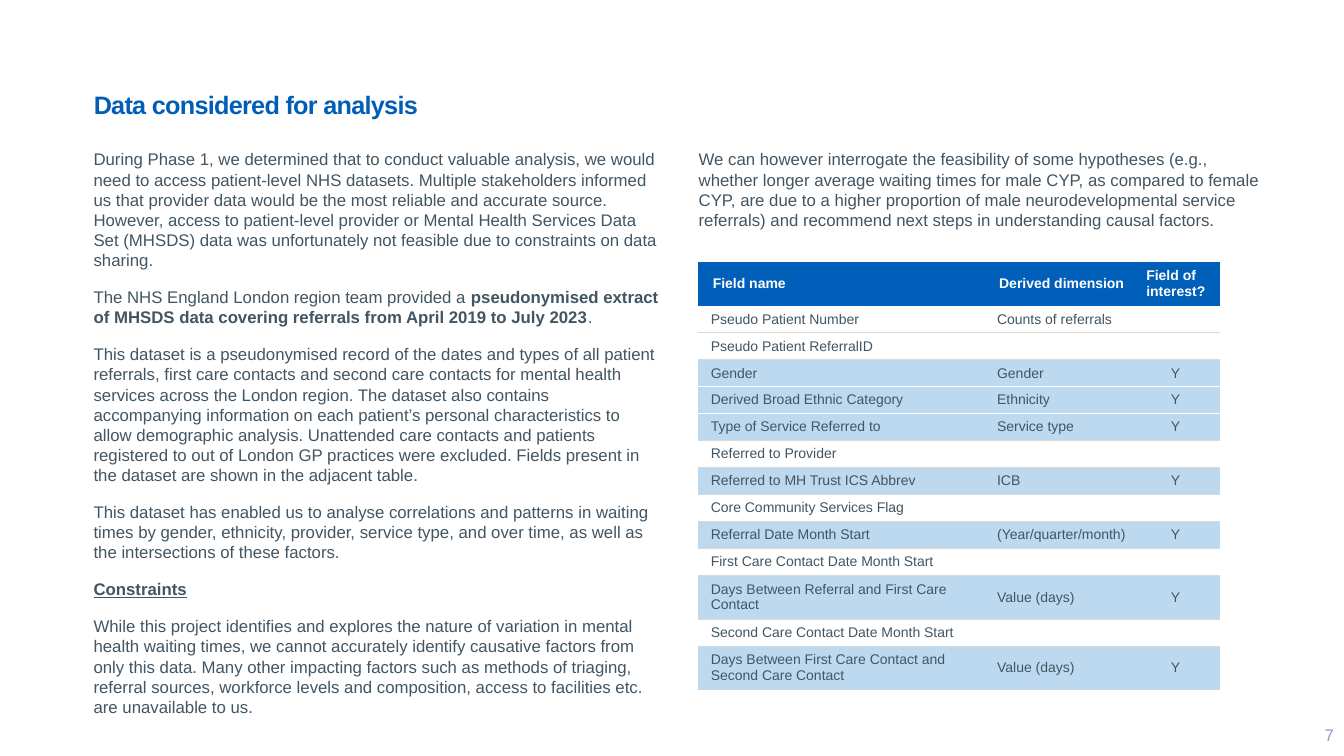
import dataclasses

import pptx
import pptx.dml.color
import pptx.enum.text
import pptx.oxml.ns
import pptx.util
from lxml import etree
from pptx.util import Inches

ALIGN = pptx.enum.text.PP_ALIGN
ANCHOR = pptx.enum.text.MSO_ANCHOR


@dataclasses.dataclass(frozen=True)
class Theme:
    font: str = "Arial"
    blue: str = "005EB8"
    header: str = "005FB8"
    body: str = "425563"
    number: str = "8C9DCD"
    shaded: str = "BDD9F0"
    white: str = "FFFFFF"
    rule: str = "D9D9D9"
    title_size: float = 18
    body_size: float = 12
    table_size: float = 10


THEME = Theme()

# Each paragraph is a list of (text, style) runs
FINDINGS = [
    [("During Phase 1, we determined that to conduct valuable analysis, we would need to access "
      "patient-level NHS datasets. Multiple stakeholders informed us that provider data would be the "
      "most reliable and accurate source. However, access to patient-level provider or Mental Health "
      "Services Data Set (MHSDS) data was unfortunately not feasible due to constraints on data "
      "sharing.", "")],
    [("The NHS England London region team provided a ", ""),
     ("pseudonymised extract of MHSDS data covering referrals from April 2019 to July 2023", "b"),
     (".", "")],
    [("This dataset is a pseudonymised record of the dates and types of all patient referrals, first "
      "care contacts and second care contacts for mental health services across the London region. The "
      "dataset also contains accompanying information on each patient’s personal characteristics to "
      "allow demographic analysis. Unattended care contacts and patients registered to out of London "
      "GP practices were excluded. Fields present in the dataset are shown in the adjacent table.", "")],
    [("This dataset has enabled us to analyse correlations and patterns in waiting times by gender, "
      "ethnicity, provider, service type, and over time, as well as the intersections of these "
      "factors.", "")],
    [("Constraints", "bu")],
    [("While this project identifies and explores the nature of variation in mental health waiting "
      "times, we cannot accurately identify causative factors from only this data. Many other "
      "impacting factors such as methods of triaging, referral sources, workforce levels and "
      "composition, access to facilities etc. are unavailable to us.", "")],
]
HYPOTHESES = [
    [("We can however interrogate the feasibility of some hypotheses (e.g., whether longer average "
      "waiting times for male CYP, as compared to female CYP, are due to a higher proportion of male "
      "neurodevelopmental service referrals) and recommend next steps in understanding causal "
      "factors.", "")],
]
FIELDS = [
    ("Field name", "Derived dimension", "Field of interest?"),
    ("Pseudo Patient Number", "Counts of referrals", ""),
    ("Pseudo Patient ReferralID", "", ""),
    ("Gender", "Gender", "Y"),
    ("Derived Broad Ethnic Category", "Ethnicity", "Y"),
    ("Type of Service Referred to", "Service type", "Y"),
    ("Referred to Provider", "", ""),
    ("Referred to MH Trust ICS Abbrev", "ICB", "Y"),
    ("Core Community Services Flag", "", ""),
    ("Referral Date Month Start", "(Year/quarter/month)", "Y"),
    ("First Care Contact Date Month Start", "", ""),
    ("Days Between Referral and First Care Contact", "Value (days)", "Y"),
    ("Second Care Contact Date Month Start", "", ""),
    ("Days Between First Care Contact and Second Care Contact", "Value (days)", "Y"),
]
COLUMN_WIDTHS = (2.84, 1.46, 0.88)
TALL_ROWS = (0, 11, 13)


def rgb(value):
    return pptx.dml.color.RGBColor.from_string(value)


def add_span(para, text, size, color, style=""):
    span = para.add_run()
    span.text = text
    span.font.name = THEME.font
    span.font.size = pptx.util.Pt(size)
    span.font.color.rgb = rgb(color)
    span.font.bold = "b" in style
    span.font.underline = "u" in style
    return span


def add_title(page, box, text):
    title = page.shapes.title
    title.left, title.top, title.width, title.height = map(Inches, box)
    frame = title.text_frame
    frame.word_wrap = True
    frame.auto_size = pptx.enum.text.MSO_AUTO_SIZE.NONE
    frame.vertical_anchor = ANCHOR.TOP
    para = frame.paragraphs[0]
    para.alignment = ALIGN.LEFT
    span = add_span(para, text, THEME.title_size, THEME.blue, "b")
    span.font._element.set("spc", "-50")


def add_prose(page, box, paragraphs, side_inset=0.1, space_after=12):
    frame = page.shapes.add_textbox(*map(Inches, box)).text_frame
    frame.word_wrap = True
    frame.margin_left = frame.margin_right = Inches(side_inset)
    for index, spans in enumerate(paragraphs):
        para = frame.add_paragraph() if index else frame.paragraphs[0]
        para.space_after = pptx.util.Pt(space_after)
        for text, style in spans:
            add_span(para, text, THEME.body_size, THEME.body, style)


def add_page_number(page, box, number):
    frame = page.shapes.add_textbox(*map(Inches, box)).text_frame
    frame.word_wrap = True
    frame.vertical_anchor = ANCHOR.MIDDLE
    para = frame.paragraphs[0]
    para.alignment = ALIGN.RIGHT
    add_span(para, number, THEME.body_size, THEME.number)


def set_edges(cell, top, bottom):
    """Draw the horizontal edges, each a (colour, points) pair or None; the sides stay open."""
    qn = pptx.oxml.ns.qn
    properties = cell._tc.get_or_add_tcPr()
    edges = (("a:lnL", None), ("a:lnR", None), ("a:lnT", top), ("a:lnB", bottom))
    for position, (tag, edge) in enumerate(edges):
        line = etree.Element(qn(tag))
        if edge:
            color, points = edge
            line.set("w", str(int(pptx.util.Pt(points))))
            fill = etree.SubElement(line, qn("a:solidFill"))
            etree.SubElement(fill, qn("a:srgbClr")).set("val", color)
        else:
            etree.SubElement(line, qn("a:noFill"))
        properties.insert(position, line)


def edge_below(row):
    """Line under a row: none at the header and the end, white between shaded rows."""
    if row in (-1, 0, len(FIELDS) - 1):
        return None
    if FIELDS[row][2] and FIELDS[row + 1][2]:
        return THEME.white, 1
    return THEME.rule, 0.75


def fill_cell(cell, text, row, column):
    is_header = row == 0
    fill = THEME.header if is_header else THEME.shaded if FIELDS[row][2] else THEME.white
    cell.fill.solid()
    cell.fill.fore_color.rgb = rgb(fill)
    cell.vertical_anchor = ANCHOR.MIDDLE
    cell.margin_left = cell.margin_right = cell.margin_top = cell.margin_bottom = Inches(0.05)
    set_edges(cell, edge_below(row - 1), edge_below(row))
    para = cell.text_frame.paragraphs[0]
    if not text:
        # Keep empty cells from stretching the row
        end = etree.SubElement(para._p, pptx.oxml.ns.qn("a:endParaRPr"))
        end.set("sz", str(int(THEME.table_size * 100)))
        return
    if column == 2 and not is_header:
        para.alignment = ALIGN.CENTER
    else:
        para._p.get_or_add_pPr().set("marL", str(int(Inches(0.1 if is_header else 0.08))))
    add_span(para, text, THEME.table_size, THEME.white if is_header else THEME.body,
             "b" if is_header else "")


def add_field_table(page, box):
    table = page.shapes.add_table(len(FIELDS), len(COLUMN_WIDTHS), *map(Inches, box)).table
    table.first_row = table.horz_banding = False
    for column, width in zip(table.columns, COLUMN_WIDTHS):
        column.width = Inches(width)
    for row, texts in enumerate(FIELDS):
        table.rows[row].height = Inches(0.38 if row in TALL_ROWS else 0.23)
        for column, text in enumerate(texts):
            fill_cell(table.cell(row, column), text, row, column)


def main():
    deck = pptx.Presentation()
    deck.slide_width, deck.slide_height = Inches(13.33), Inches(7.5)
    page = deck.slides.add_slide(deck.slide_layouts.get_by_name("Title Only"))

    # Left column
    add_title(page, (0.83, 0.84, 5.25, 0.4), "Data considered for analysis")
    add_prose(page, (0.83, 1.43, 5.83, 5.67), FINDINGS)

    # Right column
    add_prose(page, (6.93, 1.43, 5.57, 0.91), HYPOTHESES, side_inset=0, space_after=6)
    add_field_table(page, (6.92, 2.6, 5.18, 4.23))

    # Footer
    add_page_number(page, (12.36, 7.09, 0.97, 0.4), "7")
    deck.save("out.pptx")


if __name__ == "__main__":
    main()
